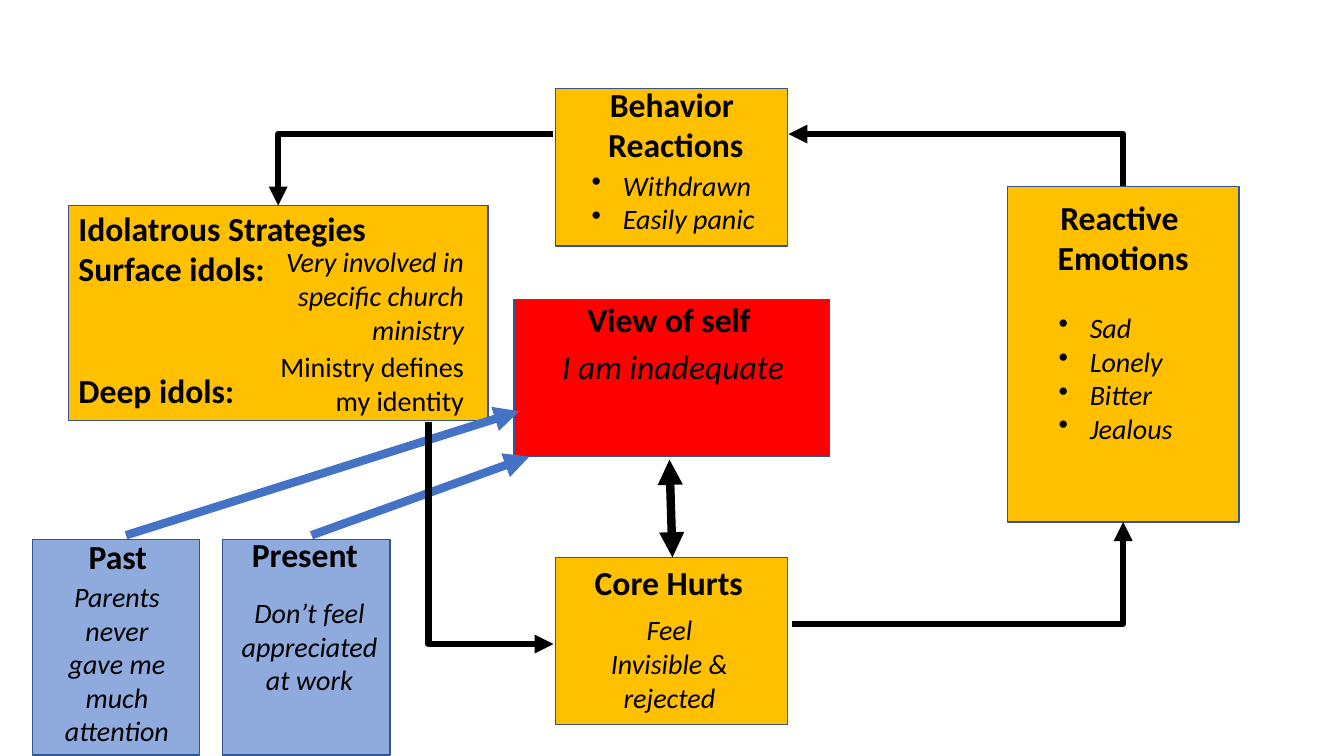
"""Build the slide on the cycle of hurts, emotions, reactions and idols."""
import lxml.etree
import pptx
import pptx.dml.color
import pptx.enum.shapes
import pptx.enum.text
import pptx.oxml.ns
import pptx.util

WIDE, HIGH = 13.33, 7.5
COLS, ROWS = 133.3, 75
HUES = {"gold": "FFC000", "red": "FF0000", "pale": "8FAADC",
        "edge": "325491", "blue": "4472C4", "black": "000000"}
KIND = pptx.enum.shapes.MSO_SHAPE
LINK = pptx.enum.shapes.MSO_CONNECTOR
ALIGN = pptx.enum.text.PP_ALIGN
LEFT, MID, RIGHT = ALIGN.LEFT, ALIGN.CENTER, ALIGN.RIGHT


def col(n):
    """Return the length of n grid columns."""
    return pptx.util.Inches(n * WIDE / COLS)


def row(n):
    """Return the length of n grid rows."""
    return pptx.util.Inches(n * HIGH / ROWS)


def area(x, y, w, h):
    """Turn a grid area into slide lengths."""
    return col(x), row(y), col(w), row(h)


def hue(name):
    """Look up a colour by name."""
    return pptx.dml.color.RGBColor.from_string(HUES[name])


def box(slide, place, fill, kind=KIND.FLOWCHART_PROCESS):
    """Add a filled box with a thin edge."""
    shape = slide.shapes.add_shape(kind, *area(*place))
    shape.shadow.inherit = False
    shape.fill.solid()
    shape.fill.fore_color.rgb = hue(fill)
    shape.line.color.rgb = hue("edge")
    shape.line.width = pptx.util.Pt(1)


def text(slide, place, lines, size=24, bold=False, slant=False,
         align=LEFT, wrap=False, dots=False, gap=0):
    """Add a text box; gap is the space above its last line."""
    frame = slide.shapes.add_textbox(*area(*place)).text_frame
    frame.word_wrap = wrap
    frame.auto_size = pptx.enum.text.MSO_AUTO_SIZE.SHAPE_TO_FIT_TEXT
    frame.text = "\n".join(lines)
    for para in frame.paragraphs:
        para.alignment = align
        font = para.font
        font.name, font.size = "Calibri", pptx.util.Pt(size)
        font.bold, font.italic = bold, slant
        font.color.rgb = hue("black")
        if dots:
            dot(para)
    if gap:
        frame.paragraphs[-1].space_before = pptx.util.Pt(gap)


def dot(para):
    """Give a paragraph a round bullet and a hanging indent."""
    props = para._p.get_or_add_pPr()
    props.set("marL", str(col(3.1)))
    props.set("indent", str(-col(3.1)))
    mark = lxml.etree.Element(pptx.oxml.ns.qn("a:buChar"), char="•")
    props.insert(0, mark)


def arrow(slide, start, end, ends=("tailEnd",), tint="black", width=6,
          bent=False):
    """Add an arrow; a bent one runs level first, then upright."""
    kind = LINK.ELBOW if bent else LINK.STRAIGHT
    link = slide.shapes.add_connector(
        kind, col(start[0]), row(start[1]), col(end[0]), row(end[1]))
    link.line.color.rgb = hue(tint)
    link.line.width = pptx.util.Pt(width)
    name = pptx.oxml.ns.qn
    props = link._element.spPr
    if bent:
        props.find(name("a:prstGeom")).set("prst", "bentConnector2")
    for tip in ends:
        lxml.etree.SubElement(props.find(name("a:ln")), name("a:" + tip),
                              type="triangle")
    lxml.etree.SubElement(props, name("a:effectLst"))


def boxes(slide):
    """Add all the boxes."""
    box(slide, (51, 29.7, 31.3, 15.6), "red")
    box(slide, (55.1, 55.3, 23, 16.6), "gold", KIND.RECTANGLE)
    for place in ((55.1, 8.8, 23, 15.6), (99.9, 18.5, 23, 33.3),
                  (6.8, 20.4, 41.6, 21.3)):
        box(slide, place, "gold")
    for left in (3.2, 22.1):
        box(slide, (left, 53.5, 16.6, 21.4), "pale")


def arrows(slide):
    """Add the links between the boxes."""
    for start, end in (((12.5, 53.1), (51.5, 40.8)),
                       ((30.9, 53.1), (52.5, 45.3))):
        arrow(slide, start, end, tint="blue")
    for start, end, tip in (((78.2, 13.3), (111.4, 18.5), "headEnd"),
                            ((54.9, 13.3), (27.6, 20.4), "tailEnd"),
                            ((78.6, 61.9), (111.4, 51.8), "tailEnd"),
                            ((54.9, 63.9), (42.5, 41.9), "headEnd")):
        arrow(slide, start, end, (tip,), width=4.5, bent=True)
    arrow(slide, (66.4, 45.6), (66.7, 55.3), ("headEnd", "tailEnd"))


def heads(slide):
    """Add the bold headings."""
    for place, line in (((7.8, 52.7, 7.9, 5), "Past"),
                        ((24, 52.5, 12.7, 5), "Present"),
                        ((58, 55.3, 16.9, 5), "Core Hurts"),
                        ((57.3, 29.2, 18.4, 5), "View of self")):
        text(slide, place, [line], bold=True)
    for place, lines in (
            ((103.8, 19, 15.2, 9.1), ["Reactive ", "Emotions"]),
            ((58.5, 7.8, 16.3, 9.1), ["Behavior", " Reactions"])):
        text(slide, place, lines, bold=True, align=MID)
    text(slide, (6.8, 20.1, 31.7, 21.2),
         ["Idolatrous Strategies", "Surface idols:", "Deep idols:"],
         bold=True, wrap=True, gap=58)


def notes(slide):
    """Add the answers under the headings."""
    for place, line, align, slant in (
            ((4.7, 57, 13.8, 17.8),
             "Parents never gave me much attention", MID, True),
            ((22.7, 58.6, 16, 11.1),
             "Don’t feel appreciated at work", MID, True),
            ((59.5, 60.3, 13.8, 11.1),
             "Feel Invisible & rejected", MID, True),
            ((24, 34.2, 23, 7.7),
             "Ministry defines my identity", RIGHT, False),
            ((23.4, 23.8, 23.6, 11.1),
             "Very involved in specific church ministry", RIGHT, True)):
        text(slide, place, [line], 20, slant=slant, align=align, wrap=True)
    for place, lines in (
            ((104, 30.3, 13.5, 14.5), ["Sad", "Lonely", "Bitter", "Jealous"]),
            ((57.7, 16.2, 18.6, 7.7), ["Withdrawn", "Easily panic"])):
        text(slide, place, lines, 20, slant=True, dots=True)
    text(slide, (54.6, 33.8, 24.3, 5), ["I am inadequate"], slant=True,
         align=MID)


def main():
    """Build and save the slide."""
    deck = pptx.Presentation()
    deck.slide_width = pptx.util.Inches(WIDE)
    deck.slide_height = pptx.util.Inches(HIGH)
    slide = deck.slides.add_slide(deck.slide_layouts[6])
    boxes(slide)
    arrows(slide)
    heads(slide)
    notes(slide)
    deck.save("out.pptx")


if __name__ == "__main__":
    main()
